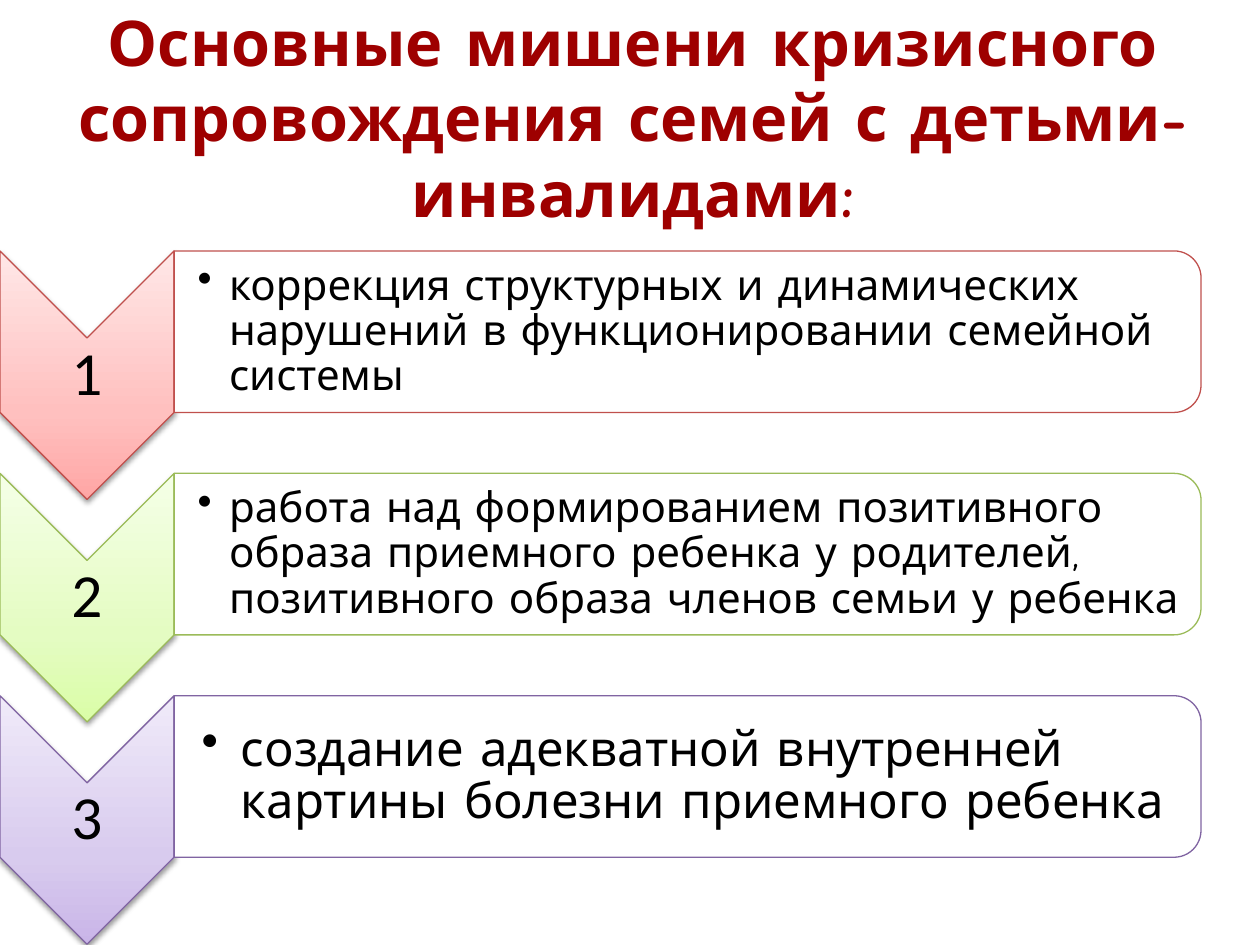
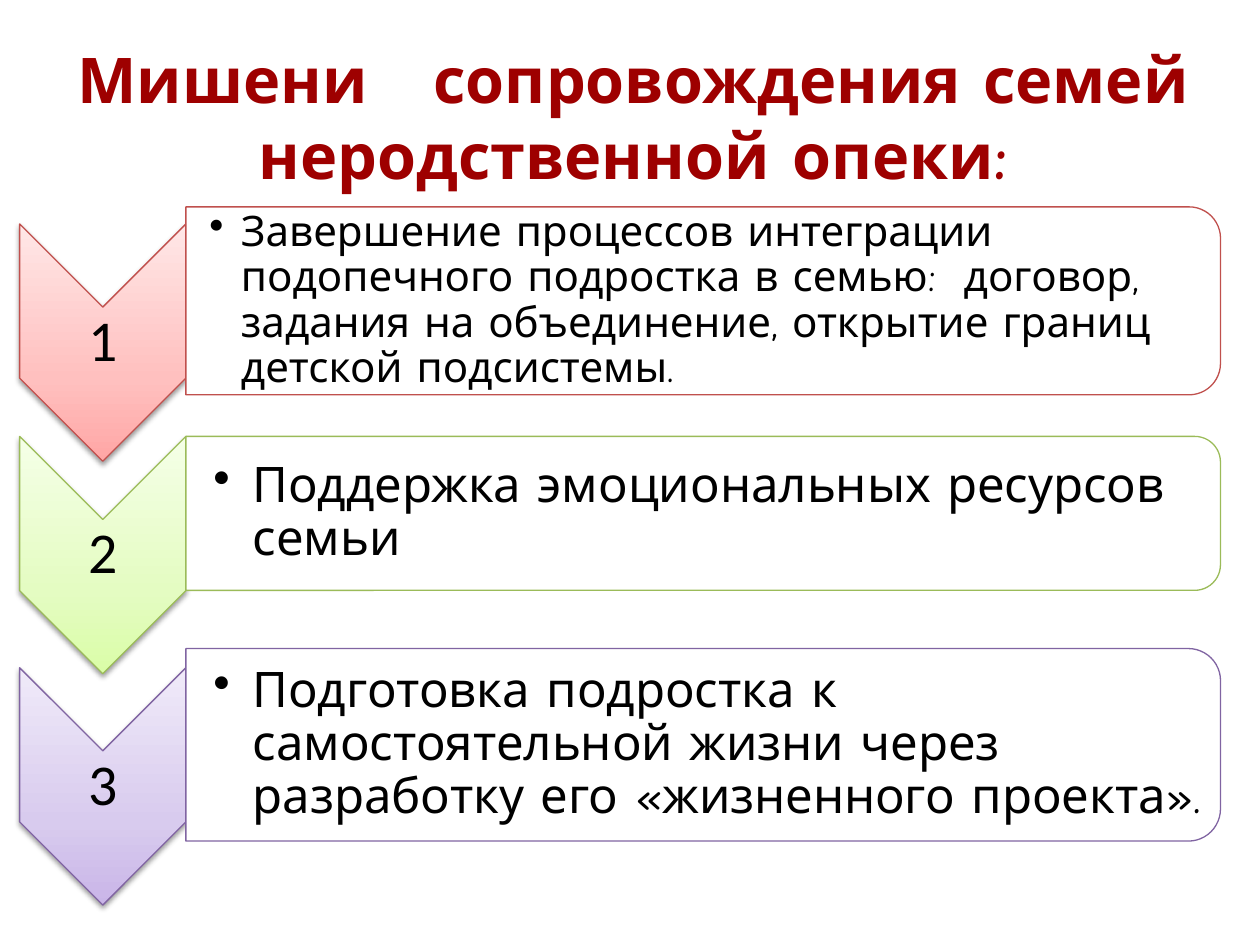
from dataclasses import dataclass

from lxml import etree
from pptx import Presentation
from pptx import util as u
from pptx.dml.color import RGBColor
from pptx.enum import shapes, text
from pptx.oxml import parse_xml
from pptx.oxml.ns import nsdecls, qn

Pt = u.Pt

TITLE_RED = RGBColor(0x9E, 0x00, 0x00)
WHITE = RGBColor(0xFF, 0xFF, 0xFF)
BLACK = RGBColor(0x00, 0x00, 0x00)
TEXT_FONT = "Comic Neue"
NUMBER_FONT = "Calibri"
GAP = "|"  # marks a widened space between words


@dataclass(frozen=True)
class Theme:
    line: RGBColor
    stops: tuple[RGBColor, RGBColor, RGBColor]  # from bottom to top


@dataclass(frozen=True)
class Target:
    wording: str
    size: float
    chevron_top: float
    panel_top: float
    panel_height: float


@dataclass(frozen=True)
class TargetSlide:
    title: str
    left: float
    chevron_width: float
    chevron_height: float
    panel_width: float
    number_size: float
    targets: tuple[Target, ...]


def theme(line: str, *stops: str) -> Theme:
    return Theme(RGBColor.from_string(line), tuple(map(RGBColor.from_string, stops)))


THEMES = (
    theme("C0504D", "FFA6A5", "FFC0BF", "FFE7E7"),
    theme("9BBB59", "DAFDA7", "E4FCC2", "F5FFE7"),
    theme("8064A2", "C9B5E8", "D8CBEE", "F0EAF9"),
)

FIRST_TOP, ROW_STEP = 143.4, 127.1
FAMILY_TARGETS = (
    ("коррекция структурных и динамических нарушений в функционировании "
     "семейной системы", 24),
    ("работа над формированием позитивного образа приемного ребенка у родителей, "
     "позитивного образа членов семьи у ребенка", 24),
    ("создание адекватной внутренней картины болезни приемного ребенка", 28),
)

SLIDES = (
    TargetSlide(
        "Основные мишени кризисного сопровождения семей с детьми-инвалидами:",
        0, 99.5, 142, 586.8, 35,
        tuple(
            Target(wording, size, FIRST_TOP + row * ROW_STEP, FIRST_TOP + row * ROW_STEP, 92.3)
            for row, (wording, size) in enumerate(FAMILY_TARGETS)
        ),
    ),
    TargetSlide(
        f"Мишени{GAP}сопровождения семей неродственной опеки:",
        11.2, 95, 135.6, 591.2, 33,
        (
            Target(f"Завершение процессов интеграции подопечного подростка в семью:{GAP}"
                   "договор, задания на объединение, открытие границ детской подсистемы.",
                   24, 128, 118.2, 107.4),
            Target("Поддержка эмоциональных ресурсов семьи", 28, 249.4, 249.4, 88),
            Target("Подготовка подростка к самостоятельной жизни через разработку его "
                   "«жизненного проекта».", 28, 381.6, 370.6, 110),
        ),
    ),
)


def add_text(slide, box: tuple[float, ...], wording: str, font: str, size: float,
             color: RGBColor = BLACK, bold: bool = False, centred: bool = True,
             insets: tuple[float, float] = (1.5, 1.5), spacing: float = 0.9,
             indent: float = 0, gap: float = 0) -> None:
    """Add a wrapped one-paragraph box; insets are left and the other sides."""
    frame = slide.shapes.add_textbox(*map(Pt, box)).text_frame
    frame.word_wrap = True
    frame.vertical_anchor = text.MSO_ANCHOR.MIDDLE
    frame.margin_left = Pt(insets[0])
    frame.margin_right = frame.margin_top = frame.margin_bottom = Pt(insets[1])
    paragraph = frame.paragraphs[0]
    paragraph.alignment = text.PP_ALIGN.CENTER if centred else text.PP_ALIGN.LEFT
    paragraph.line_spacing = spacing
    if indent:
        properties = paragraph._p.get_or_add_pPr()
        properties.set("marL", str(Pt(indent)))
        properties.set("indent", str(-Pt(indent)))
        etree.SubElement(properties, qn("a:buChar")).set("char", "•")

    for position, part in enumerate(wording.split(GAP)):
        if position:
            wide_space = paragraph.add_run()
            wide_space.text = " "
            wide_space._r.get_or_add_rPr().set("spc", str(int(gap * 100)))
        paragraph.add_run().text = part
    for run in paragraph.runs:
        run.font.name = font
        run.font.size = Pt(size)
        run.font.bold = bold
        run.font.color.rgb = color


def add_turned_shape(slide, kind, box: tuple[float, ...], line: RGBColor):
    """Add a shape turned by 90 degrees that covers the given box."""
    left, top, width, height = box
    shift = (width - height) / 2
    shape = slide.shapes.add_shape(
        kind, Pt(left + shift), Pt(top - shift), Pt(height), Pt(width))
    shape.rotation = 90
    shape.shadow.inherit = False
    shape.line.color.rgb = line
    shape.line.width = Pt(0.75)
    return shape


def style_chevron(shape, colors: tuple[RGBColor, ...]) -> None:
    """Give the chevron its upward gradient and soft lower shadow."""
    stops = "".join(
        f'<a:gs pos="{position}"><a:srgbClr val="{color}"/></a:gs>'
        for position, color in zip((0, 35000, 100000), colors))
    properties = shape._element.spPr
    properties.find(qn("a:prstGeom")).addnext(parse_xml(
        f'<a:gradFill {nsdecls("a")} rotWithShape="0"><a:gsLst>{stops}</a:gsLst>'
        '<a:lin ang="16200000" scaled="0"/></a:gradFill>'))
    properties.find(qn("a:effectLst")).append(parse_xml(
        f'<a:outerShdw {nsdecls("a")} blurRad="{Pt(3.1)}" dist="{Pt(1.6)}" dir="5400000" '
        'rotWithShape="0"><a:srgbClr val="000000"><a:alpha val="38000"/></a:srgbClr>'
        '</a:outerShdw>'))


def add_target(slide, layout: TargetSlide, number: int, target: Target, colors: Theme) -> None:
    # Numbered chevron
    width, height = layout.chevron_width, layout.chevron_height
    chevron = add_turned_shape(slide, shapes.MSO_SHAPE.CHEVRON,
                               (layout.left, target.chevron_top, width, height), colors.line)
    style_chevron(chevron, colors.stops)
    add_text(slide, (layout.left, target.chevron_top + width / 2, width, height - width),
             str(number), NUMBER_FONT, layout.number_size)

    # Panel with the bulleted target
    left = layout.left + width
    panel = add_turned_shape(
        slide, shapes.MSO_SHAPE.ROUND_2_SAME_RECTANGLE,
        (left, target.panel_top, layout.panel_width, target.panel_height), colors.line)
    panel.fill.solid()
    panel.fill.fore_color.rgb = WHITE
    inset = 4.5
    add_text(slide, (left, target.panel_top + inset, layout.panel_width - inset,
                     target.panel_height - 2 * inset),
             target.wording, TEXT_FONT, target.size, centred=False,
             insets=(target.size * 0.56, 1.5), indent=target.size * 0.75 if target.size == 24
             else 22.5, gap=8)


def main() -> None:
    presentation = Presentation()
    presentation.slide_width, presentation.slide_height = Pt(720), Pt(540)
    for layout in SLIDES:
        slide = presentation.slides.add_slide(presentation.slide_layouts[6])
        add_text(slide, (36, 21.6, 648, 90), layout.title, TEXT_FONT, 36, TITLE_RED,
                 bold=True, insets=(7.2, 3.6), spacing=1, gap=25)
        for number, (target, colors) in enumerate(zip(layout.targets, THEMES), 1):
            add_target(slide, layout, number, target, colors)
    presentation.save("out.pptx")


if __name__ == "__main__":
    main()
